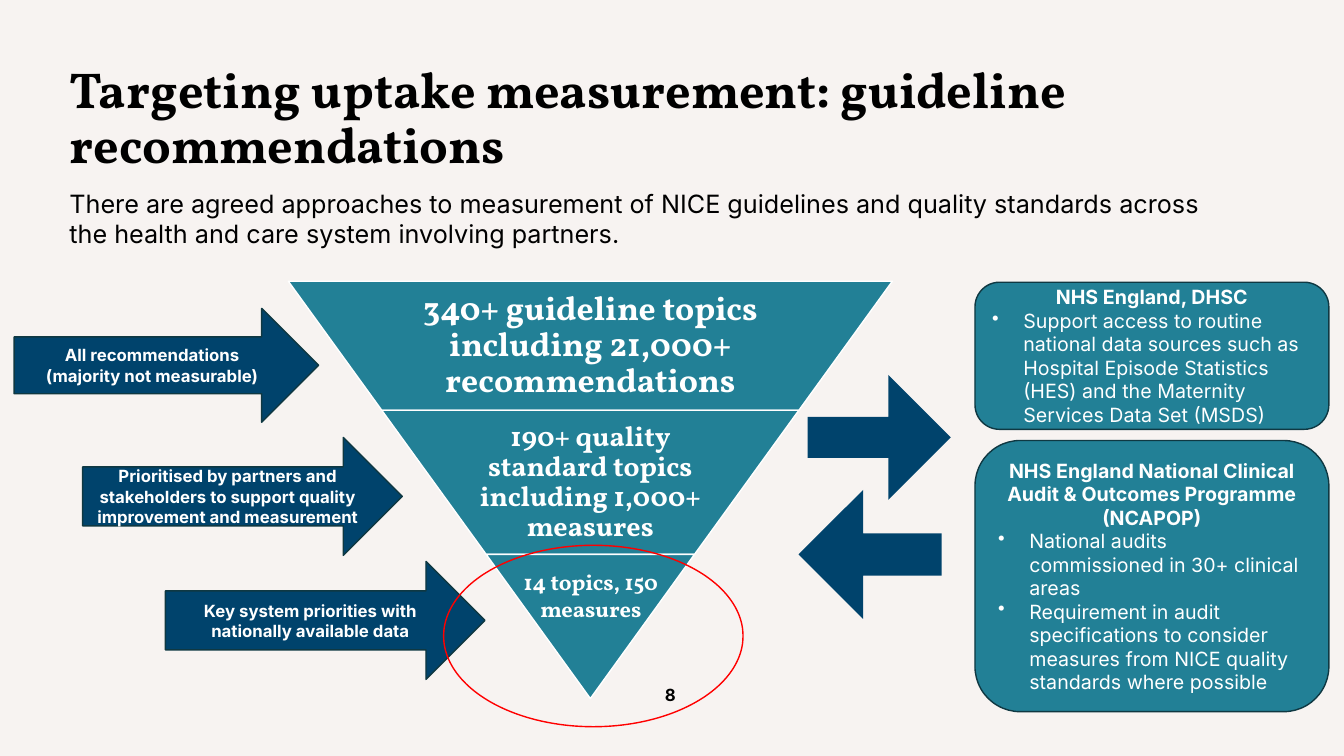
from lxml import etree
from pptx import Presentation
from pptx.dml.color import RGBColor
from pptx.enum.shapes import MSO_SHAPE as Shape
from pptx.enum.text import MSO_ANCHOR as Anchor, PP_ALIGN as Align
from pptx.oxml.ns import qn
from pptx.util import Inches, Pt

COLORS = {
    "paper": "F7F3F1", "ink": "000000", "white": "FFFFFF", "teal": "228096",
    "navy": "00436C", "edge": "0F3842", "red": "FF0000",
}
BODY, DISPLAY = "Inter", "Vollkorn"
SLOPE = 0.724


def rgb(name):
    """Return the palette colour called name."""
    return RGBColor.from_string(COLORS[name])


def add_bullet(paragraph, indent=0.31):
    """Give a paragraph a round bullet with a hanging indent."""
    props = paragraph._p.get_or_add_pPr()
    props.set("marL", str(Inches(indent)))
    props.set("indent", str(-Inches(indent)))
    etree.SubElement(props, qn("a:buChar")).set("char", "•")


def write(frame, lines, size, font=BODY, color="ink", bold=False,
          align=Align.LEFT, spacing=None, anchor=Anchor.TOP):
    """Fill a text frame with one styled paragraph per line."""
    frame.word_wrap = True
    frame.vertical_anchor = anchor
    for index, line in enumerate(lines):
        paragraph = frame.add_paragraph() if index else frame.paragraphs[0]
        paragraph.alignment = align
        if spacing:
            paragraph.line_spacing = spacing
        run = paragraph.add_run()
        run.text = line
        run.font.size = Pt(size)
        run.font.name = font
        run.font.bold = bold
        run.font.color.rgb = rgb(color)


def add_text(slide, box, text, size, inset=None, **style):
    """Place a text box holding one paragraph."""
    frame = slide.shapes.add_textbox(*map(Inches, box)).text_frame
    if inset is not None:
        frame.margin_left = frame.margin_right = Inches(inset)
        frame.margin_top = frame.margin_bottom = Inches(inset)
    write(frame, [text], size, **style)


def add_figure(slide, kind, box, fill=None, line=None, adjust=(), rotation=0):
    """Place a preset shape with a flat fill and a thin outline."""
    figure = slide.shapes.add_shape(kind, *map(Inches, box))
    figure.shadow.inherit = False
    figure.rotation = rotation
    for index, value in enumerate(adjust):
        figure.adjustments[index] = value
    if fill:
        figure.fill.solid()
        figure.fill.fore_color.rgb = rgb(fill)
    else:
        figure.fill.background()
    if line:
        figure.line.color.rgb = rgb(line)
        figure.line.width = Pt(1)
    else:
        figure.line.fill.background()
    return figure


def add_heading(slide, left, top):
    """Place the title and the sentence under it."""
    add_text(slide, (left, top, 12.11, 1.27),
             "Targeting uptake measurement: guideline recommendations",
             36, font=DISPLAY, bold=True, spacing=0.9)
    add_text(slide, (left, top + 1.22, 11.8, 0.71),
             "There are agreed approaches to measurement of NICE guidelines and quality "
             "standards across the health and care system involving partners.", 18)


def add_funnel(slide, left, top, width):
    """Stack three bands that narrow to a point."""
    label = dict(font=DISPLAY, color="white", bold=True, align=Align.CENTER)
    center = left + width / 2
    bands = [
        (1.28, 3.9, 24, "340+ guideline topics including 21,000+ recommendations"),
        (1.43, 2.69, 20, "190+ quality standard topics including 1,000+ measures"),
        (1.43, None, None, None),
    ]
    for height, text_width, size, text in bands:
        add_figure(slide, Shape.TRAPEZOID, (center - width / 2, top, width, height),
                   "teal", "white", [SLOPE], 180)
        if text:
            add_text(slide, (center - text_width / 2, top, text_width, height), text, size,
                     inset=0.03, spacing=0.9, anchor=Anchor.MIDDLE, **label)
            top += height
            width -= 2 * SLOPE * height
    add_text(slide, (center - 0.8, top + 0.09, 1.61, 0.64),
             "14 topics, 150 measures", 16, **label)


def add_stages(slide):
    """Place the labelled arrows that point at the funnel bands."""
    stages = [
        ((0.14, 3.06, 3.02, 1.13), ["All recommendations", "(majority not measurable)"]),
        ((0.82, 4.34, 3.17, 1.17), ["Prioritised by partners and stakeholders to support "
                                    "quality improvement and measurement"]),
        ((1.64, 5.57, 3.17, 1.17), ["Key system priorities with nationally available data"]),
    ]
    for box, lines in stages:
        arrow = add_figure(slide, Shape.RIGHT_ARROW, box, "navy", "edge")
        write(arrow.text_frame, lines, 12, color="white", bold=True,
              align=Align.CENTER, anchor=Anchor.MIDDLE)


def add_exchange(slide, left, top):
    """Place the pair of arrows between the funnel and the partners."""
    for dx, dy, height, rotation in [(0, 1.14, 1.28, 180), (0.09, 0, 1.24, 0)]:
        add_figure(slide, Shape.RIGHT_ARROW, (left + dx, top + dy, 1.42, height),
                   "navy", adjust=[0.328, 0.5], rotation=rotation)


def add_partner(slide, box, name, duties):
    """Place a rounded card with a partner name and its bulleted duties."""
    card = add_figure(slide, Shape.ROUNDED_RECTANGLE, box, "teal", "edge")
    write(card.text_frame, [name, *duties], 14, color="white", anchor=Anchor.MIDDLE)
    heading, *bullets = card.text_frame.paragraphs
    heading.alignment = Align.CENTER
    heading.runs[0].font.bold = True
    for bullet in bullets:
        add_bullet(bullet)


def main():
    """Build the slide and save it."""
    deck = Presentation()
    deck.slide_width, deck.slide_height = Inches(13.33), Inches(7.5)
    slide = deck.slides.add_slide(deck.slide_layouts[6])
    slide.background.fill.solid()
    slide.background.fill.fore_color.rgb = rgb("paper")
    add_text(slide, (5.15, 6.74, 3, 0.4), "8", 12, bold=True, align=Align.CENTER)
    add_heading(slide, 0.59, 0.6)
    add_funnel(slide, 2.86, 2.79, 5.99)
    add_stages(slide)
    add_partner(slide, (9.67, 4.37, 3.51, 2.69),
                "NHS England National Clinical Audit & Outcomes Programme (NCAPOP)",
                ["National audits commissioned in 30+ clinical areas",
                 "Requirement in audit specifications to consider measures from NICE "
                 "quality standards where possible"])
    add_partner(slide, (9.67, 2.8, 3.51, 1.46), "NHS England, DHSC",
                ["Support access to routine national data sources such as Hospital Episode "
                 "Statistics (HES) and the Maternity Services Data Set (MSDS)"])
    add_exchange(slide, 7.92, 3.72)
    add_figure(slide, Shape.OVAL, (4.4, 5.41, 2.97, 1.8), line="red")
    deck.save("out.pptx")


if __name__ == "__main__":
    main()
